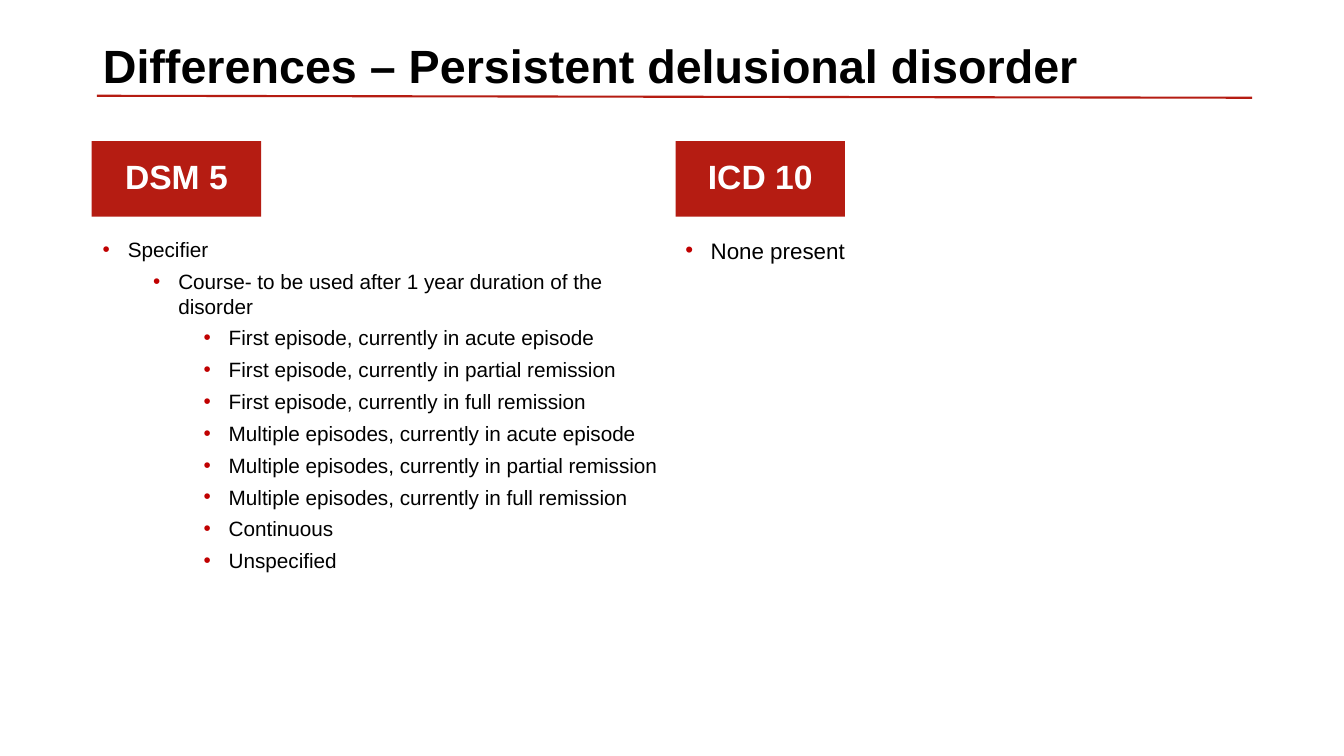
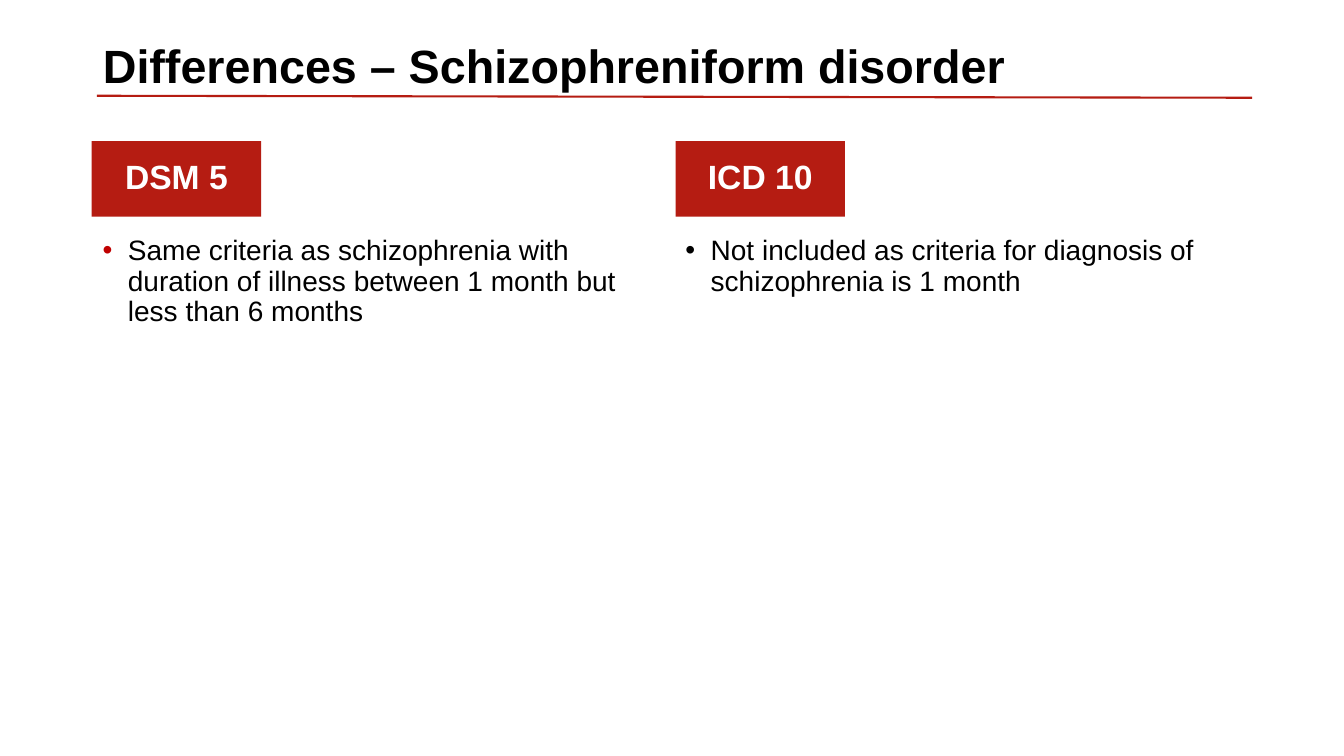
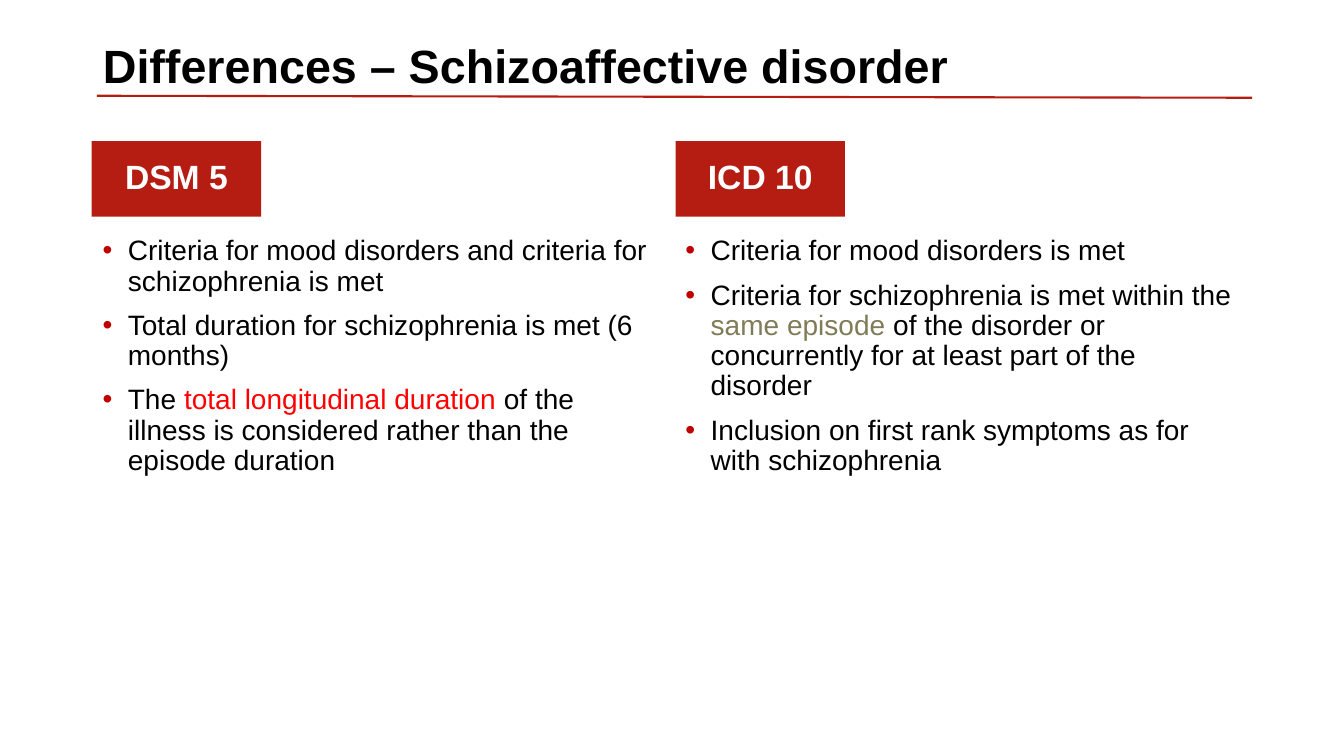
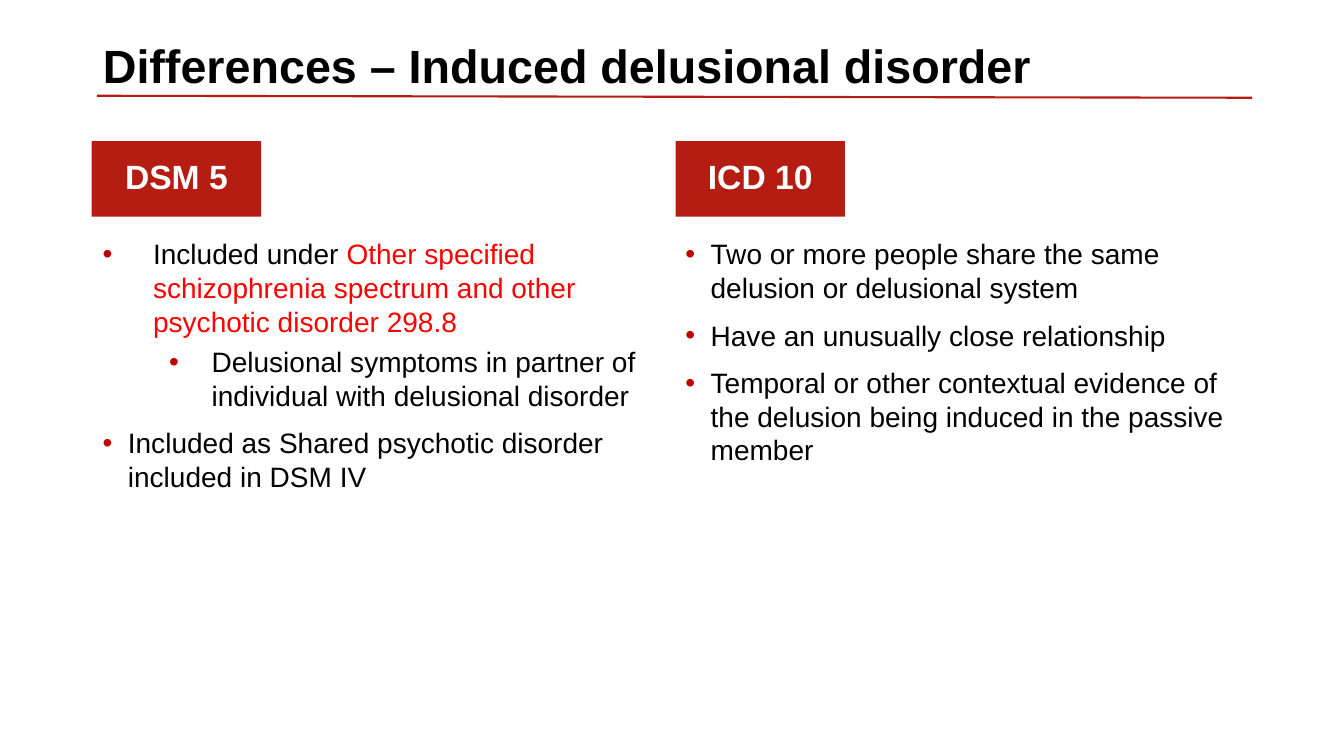
from collections import namedtuple
from dataclasses import dataclass

from lxml import etree
from pptx import Presentation
from pptx import util as u
from pptx.dml.color import RGBColor
from pptx.enum import shapes, text
from pptx.oxml import ns


@dataclass(frozen=True)
class Theme:
    font: str = "Arial"
    ink: str = "000000"
    white: str = "FFFFFF"
    brand: str = "B51C12"
    bullet: str = "C00000"
    red: str = "FF0000"
    olive: str = "807C58"
    title: float = 33.3
    badge: float = 24
    body: float = 20
    medium: float = 16
    small: float = 14.8
    tight: float = 0.9


T = Theme()
Column = namedtuple("Column", "name badge_x text_x")
Level = namedtuple("Level", "depth left hang before")
COLUMNS = (Column("DSM 5", 0.91, 0.92), Column("ICD 10", 6.7, 6.7))
TOP, SECOND, THIRD = (Level(i, 0.25 + 0.5 * i, 0.25, 5 if i else 10) for i in range(3))
LEAD = Level(1, 0.5, 0.5, 5)
DETAIL = Level(2, 1.08, 0.42, 5)

COURSES = (
    "First episode, currently in acute episode",
    "First episode, currently in partial remission",
    "First episode, currently in full remission",
    "Multiple episodes, currently in acute episode",
    "Multiple episodes, currently in partial remission",
    "Multiple episodes, currently in full remission",
    "Continuous",
    "Unspecified",
)


def write(p, words, size=T.body, color=T.ink, bold=False):
    r = p.add_run()
    r.text = words
    f = r.font
    f.name, f.size, f.bold = T.font, u.Pt(size), bold
    f.color.rgb = RGBColor.from_string(color)


def frame(sp, anchor):
    tf = sp.text_frame
    tf.word_wrap = True
    tf.auto_size = text.MSO_AUTO_SIZE.NONE
    tf.vertical_anchor = anchor
    return tf


def add_bullet(p, level, color):
    pPr = p._p.get_or_add_pPr()
    pPr.set("marL", str(u.Inches(level.left)))
    pPr.set("indent", str(-u.Inches(level.hang)))
    clr = etree.SubElement(pPr, ns.qn("a:buClr"))
    etree.SubElement(clr, ns.qn("a:srgbClr"), val=color)
    etree.SubElement(pPr, ns.qn("a:buFont"), typeface=T.font)
    etree.SubElement(pPr, ns.qn("a:buChar"), char="•")
    p.level = level.depth


def add_bullets(s, x, items, size=T.body, spacing=1.0, bullet=T.bullet):
    sp = s.shapes.add_textbox(u.Inches(x), u.Inches(2.3), u.Inches(5.71), u.Inches(3.96))
    tf = frame(sp, text.MSO_ANCHOR.TOP)
    for i, (level, *runs) in enumerate(items):
        p = tf.add_paragraph() if i else tf.paragraphs[0]
        add_bullet(p, level, bullet)
        p.line_spacing = spacing
        p.space_before = u.Pt(level.before if i else 0)
        for run in runs:
            words, color = (run, T.ink) if isinstance(run, str) else run
            write(p, words, size=size, color=color)


def add_badge(s, x, label):
    sp = s.shapes.add_shape(shapes.MSO_SHAPE.RECTANGLE, u.Inches(x), u.Inches(1.4),
                            u.Inches(1.68), u.Inches(0.75))
    sp.shadow.inherit = False
    sp.fill.solid()
    sp.fill.fore_color.rgb = RGBColor.from_string(T.brand)
    sp.line.fill.background()
    p = frame(sp, text.MSO_ANCHOR.MIDDLE).paragraphs[0]
    p.alignment = text.PP_ALIGN.CENTER
    p.line_spacing = T.tight
    write(p, label, size=T.badge, color=T.white, bold=True)


def add_title(s, words):
    sp = s.shapes.title
    sp.left, sp.top = u.Inches(0.92), u.Inches(0.4)
    sp.width, sp.height = u.Inches(11.5), u.Inches(0.56)
    p = frame(sp, text.MSO_ANCHOR.MIDDLE).paragraphs[0]
    p.alignment = text.PP_ALIGN.LEFT
    p.line_spacing = T.tight
    write(p, words, size=T.title, bold=True)


def add_layout_rule(s):
    line = s.shapes.add_connector(shapes.MSO_CONNECTOR.STRAIGHT, u.Inches(0.96), u.Inches(0.95),
                                  u.Inches(12.42), u.Inches(0.97))
    line.line.color.rgb = RGBColor.from_string(T.brand)
    line.line.width = u.Pt(1.5)
    etree.SubElement(line.element.spPr, ns.qn("a:effectLst"))
    s.slide_layout.shapes.element.append(line.element)


def add_comparison(prs, disorder, *bodies):
    s = prs.slides.add_slide(prs.slide_layouts[5])
    add_title(s, f"Differences – {disorder}")
    for column, body in zip(COLUMNS, bodies):
        add_bullets(s, column.text_x, **body)
        add_badge(s, column.badge_x, column.name)
    return s


def main():
    prs = Presentation()
    prs.slide_width, prs.slide_height = u.Inches(13.33), u.Inches(7.5)

    s = add_comparison(
        prs, "Persistent delusional disorder",
        dict(size=T.small, items=[
            (TOP, "Specifier"),
            (SECOND, "Course- to be used after 1 year duration of the disorder"),
            *((THIRD, course) for course in COURSES),
        ]),
        dict(size=T.medium, items=[(TOP, "None present")]),
    )
    add_layout_rule(s)

    add_comparison(
        prs, "Schizophreniform disorder",
        dict(spacing=T.tight, items=[
            (TOP, "Same criteria as schizophrenia with duration of illness "
                  "between 1 month but less than 6 months"),
        ]),
        dict(spacing=T.tight, bullet=T.ink, items=[
            (TOP, "Not included as criteria for diagnosis of schizophrenia is 1 month"),
        ]),
    )

    add_comparison(
        prs, "Schizoaffective disorder",
        dict(spacing=T.tight, items=[
            (TOP, "Criteria for mood disorders and criteria for schizophrenia is met"),
            (TOP, "Total duration for schizophrenia is met (6 months)"),
            (TOP, "The ", ("total longitudinal duration ", T.red),
             "of the illness is considered rather than the episode duration"),
        ]),
        dict(spacing=T.tight, items=[
            (TOP, "Criteria for mood disorders is met"),
            (TOP, "Criteria for schizophrenia is met within the ", ("same episode ", T.olive),
             "of the disorder or concurrently for at least part of the disorder"),
            (TOP, "Inclusion on first rank symptoms as for with schizophrenia"),
        ]),
    )

    add_comparison(
        prs, "Induced delusional disorder",
        dict(items=[
            (LEAD, "Included under ",
             ("Other specified schizophrenia spectrum and other psychotic disorder 298.8", T.red)),
            (DETAIL, "Delusional symptoms in partner of individual with delusional disorder"),
            (TOP, "Included as Shared psychotic disorder included in DSM IV"),
        ]),
        dict(items=[
            (TOP, "Two or more people share the same delusion or delusional system"),
            (TOP, "Have an unusually close relationship"),
            (TOP, "Temporal or other contextual evidence of the delusion being induced "
                  "in the passive member"),
        ]),
    )

    prs.save("out.pptx")


if __name__ == "__main__":
    main()
